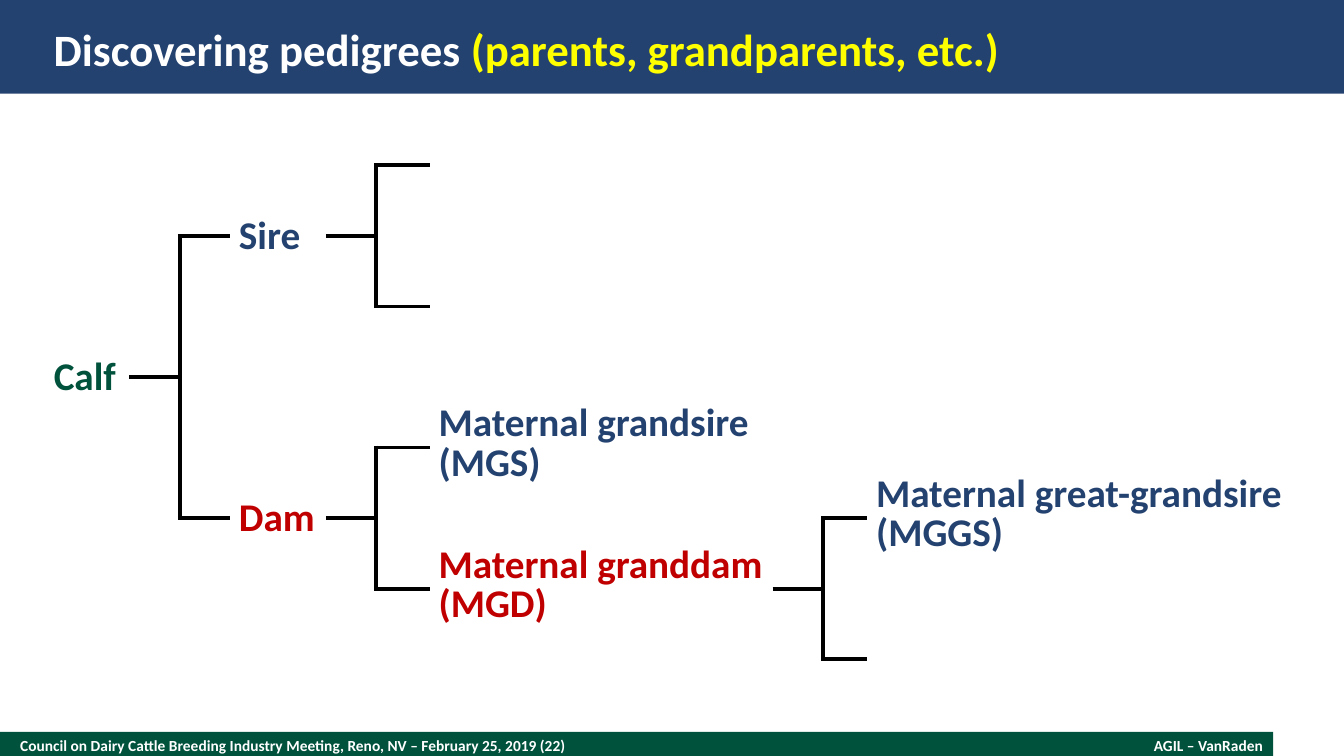
from collections import defaultdict

from lxml.etree import SubElement
from pptx import Presentation
from pptx.dml.color import RGBColor
from pptx.enum.shapes import MSO_SHAPE as Shape
from pptx.enum.text import MSO_ANCHOR as Anchor, PP_ALIGN as Align
from pptx.oxml.ns import qn
from pptx.util import Pt

NAVY, GREEN, RED = "244270", "00523C", "C00000"
WHITE, YELLOW, BLACK = "FFFFFF", "FFFF00", "000000"
MARGINS = ("margin_left", "margin_top", "margin_right", "margin_bottom")
COLUMNS = [54, 36, 36, 68.4, 36, 38.2, 244.8, 36, 31.7, 302.4]
ROW_COUNT, ROW_HEIGHT = 8, 50.4
RULE_WIDTH = 3
INDENT = 6.3

BRACKETS = [(1, 4, 2), (4, 2, 1), (4, 6, 1), (7, 7, 1)]
ANIMALS = [
    (0, 4, ["Calf"], GREEN),
    (3, 2, ["Sire"], NAVY),
    (3, 6, ["Dam"], RED),
    (6, 1, [], NAVY),
    (6, 3, [], NAVY),
    (6, 5, ["Maternal grandsire", "(MGS)"], NAVY),
    (6, 7, ["Maternal granddam", "(MGD)"], RED),
    (9, 6, ["Maternal great-grandsire", "(MGGS)"], NAVY),
]


def rgb(value):
    return RGBColor.from_string(value)


def apply(target, values):
    for name, value in values.items():
        setattr(target, name, value)


class PedigreeSlide:
    def __init__(self, deck):
        self.slide = deck.slides.add_slide(deck.slide_layouts[6])
        self.font = {"name": "Calibri", "bold": True}

    def bar(self, left, top, width, height, color):
        band = self.slide.shapes.add_shape(
            Shape.RECTANGLE, Pt(left), Pt(top), Pt(width), Pt(height))
        band.shadow.inherit = False
        band.fill.solid()
        band.fill.fore_color.rgb = rgb(color)
        band.line.fill.background()

    def run(self, paragraph, words, size, color):
        run = paragraph.add_run()
        run.text = words
        apply(run.font, {**self.font, "size": Pt(size)})
        run.font.color.rgb = rgb(color)

    def text(self, left, top, width, height, parts, size, align=Align.LEFT):
        box = self.slide.shapes.add_textbox(Pt(left), Pt(top), Pt(width), Pt(height))
        frame = box.text_frame
        apply(frame, {"word_wrap": True, "vertical_anchor": Anchor.MIDDLE,
                      **dict.fromkeys(MARGINS, 0)})
        frame.paragraphs[0].alignment = align
        for words, color in parts:
            self.run(frame.paragraphs[0], words, size, color)

    def table(self, left, top):
        tree = self.slide.shapes.add_table(
            ROW_COUNT, len(COLUMNS), Pt(left), Pt(top),
            Pt(sum(COLUMNS)), Pt(ROW_COUNT * ROW_HEIGHT)).table
        apply(tree, {"first_row": False, "horz_banding": False})
        for column, width in zip(tree.columns, COLUMNS):
            column.width = Pt(width)
        for row in tree.rows:
            row.height = Pt(ROW_HEIGHT)
        return tree

    def label(self, tree, column, middle, lines, color):
        cell = tree.cell(middle - 1, column)
        cell.merge(tree.cell(middle, column))
        apply(cell, {"vertical_anchor": Anchor.MIDDLE, **dict.fromkeys(MARGINS, 0)})
        cell.margin_left = Pt(INDENT if column else 0)
        frame = cell.text_frame
        for index, words in enumerate(lines):
            paragraph = frame.add_paragraph() if index else frame.paragraphs[0]
            if len(lines) > 1:
                paragraph.line_spacing = Pt(28)
            self.run(paragraph, words, 28, color)

    def borders(self, tree, edges):
        for row in range(ROW_COUNT):
            for column in range(len(COLUMNS)):
                cell = tree.cell(row, column)
                properties = cell._tc.get_or_add_tcPr()
                for side in "LRTB":
                    line = SubElement(properties, qn(f"a:ln{side}"))
                    if side in edges[row, column]:
                        line.set("w", str(Pt(RULE_WIDTH)))
                        fill = SubElement(line, qn("a:solidFill"))
                        SubElement(fill, qn("a:srgbClr")).set("val", BLACK)
                    else:
                        SubElement(line, qn("a:noFill"))
                cell.fill.background()


def bracket_edges():
    edges = defaultdict(set)
    for stem, middle, reach in BRACKETS:
        upper, lower = middle - reach, middle + reach
        for column, level in ((stem, middle), (stem + 1, upper), (stem + 1, lower)):
            edges[level - 1, column].add("B")
            edges[level, column].add("T")
        for row in range(upper, lower):
            edges[row, stem].add("R")
            edges[row, stem + 1].add("L")
    return edges


def main():
    deck = Presentation()
    apply(deck, {"slide_width": Pt(960), "slide_height": Pt(540)})
    page = PedigreeSlide(deck)
    page.bar(0, 522.7, 909.4, 17.3, GREEN)
    page.bar(0, 0, 960, 67, NAVY)
    page.text(14.4, 522.7, 624, 19.4, [(
        "Council on Dairy Cattle Breeding Industry Meeting, Reno, NV – February 25, 2019 (22)",
        WHITE)], 11)
    page.text(691.2, 525.6, 211, 13.7, [("AGIL – VanRaden", WHITE)], 11, Align.RIGHT)
    page.text(38.4, 9.4, 883.4, 50.4, [
        ("Discovering pedigrees ", WHITE),
        ("(parents, grandparents, etc.)", YELLOW)], 32)
    tree = page.table(38.4, 67.7)
    for animal in ANIMALS:
        page.label(tree, *animal)
    page.borders(tree, bracket_edges())
    deck.save("out.pptx")


if __name__ == "__main__":
    main()
